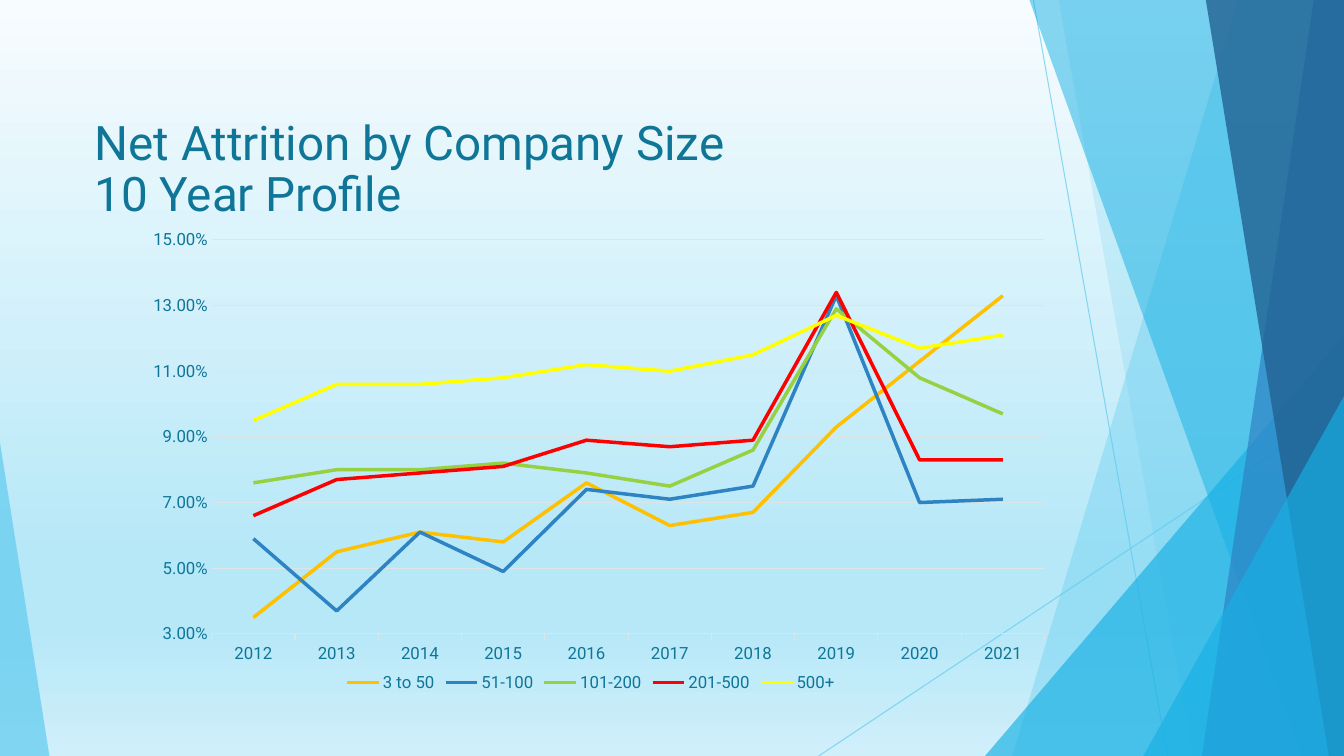
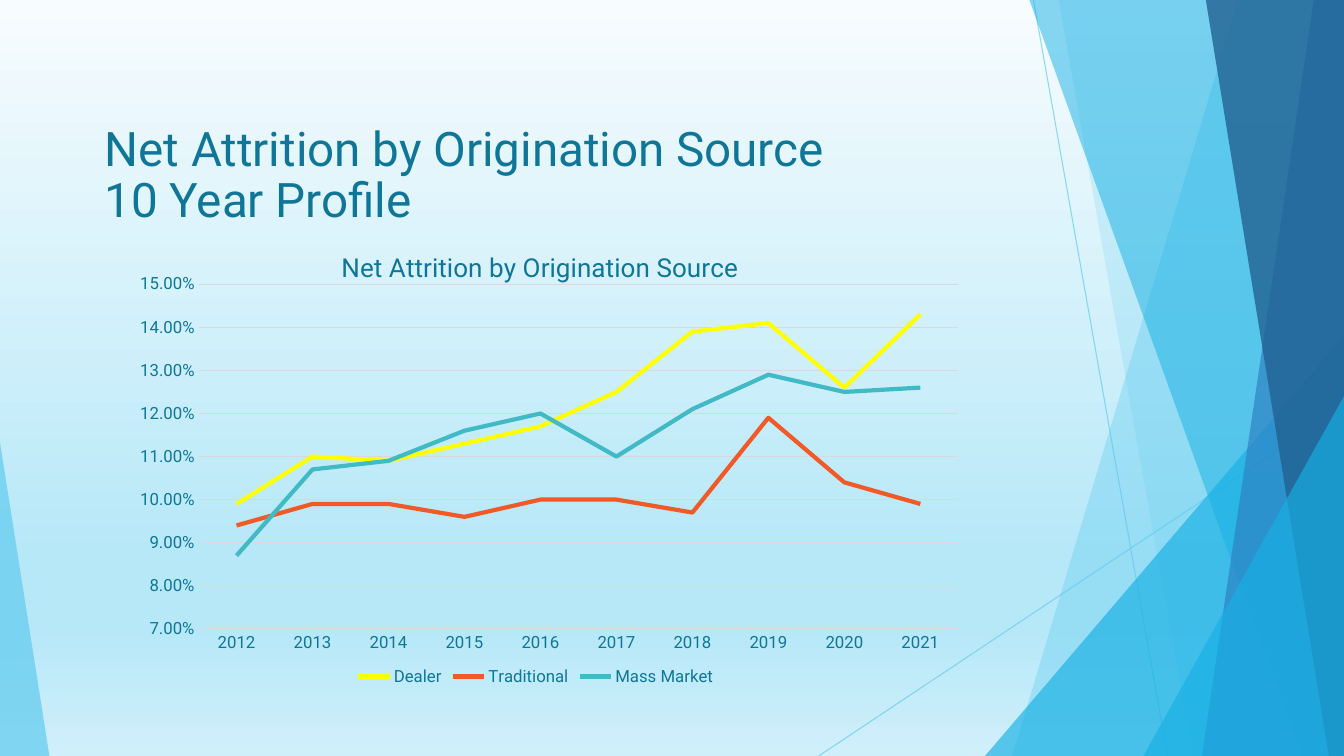
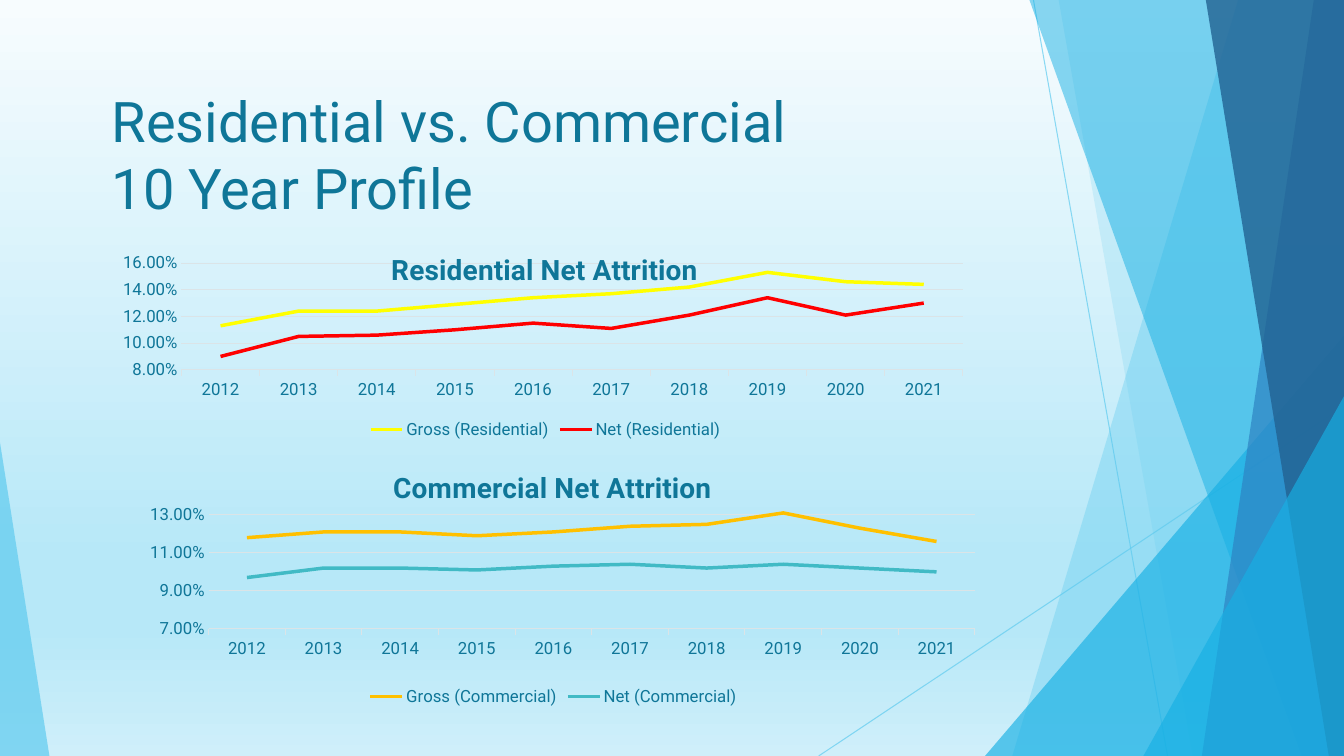
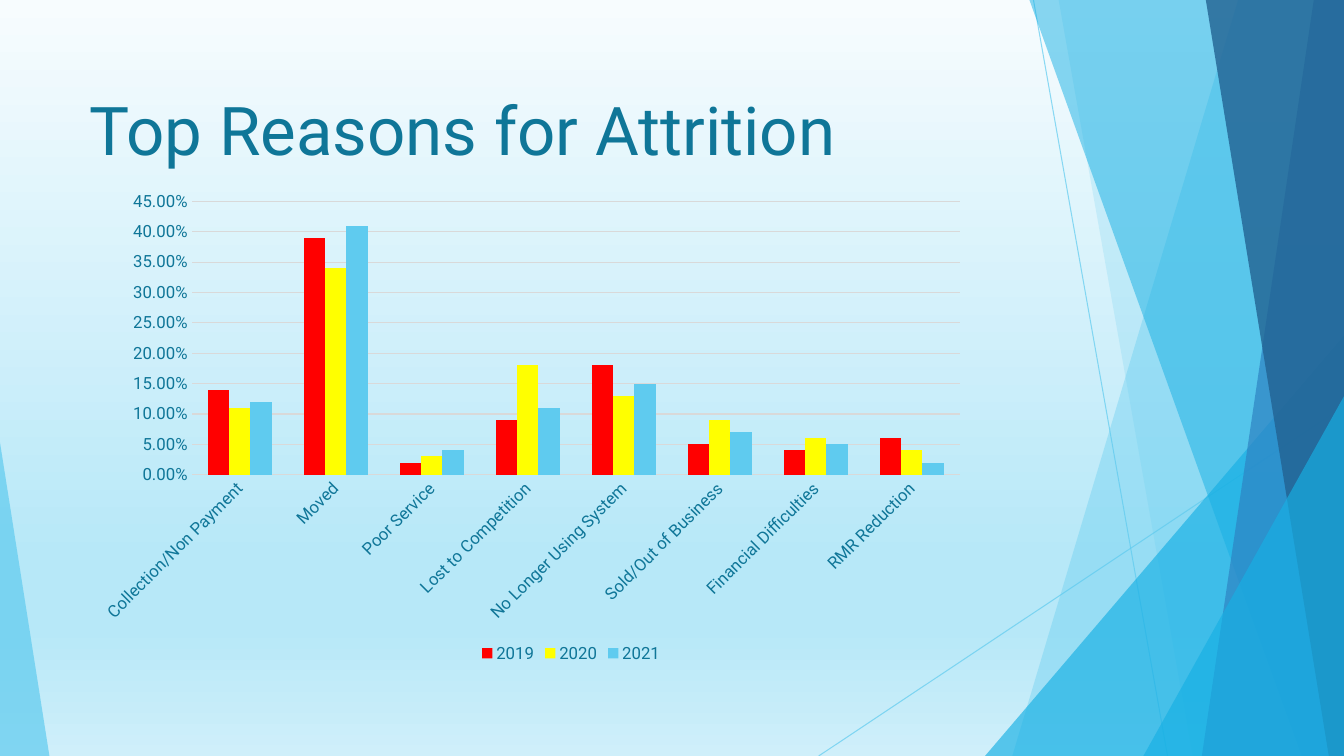
from lxml import etree
from pptx import Presentation
from pptx import util as u
from pptx.chart import data as chart_data
from pptx.dml import color as dml_color
from pptx.enum import chart as chart_enum
from pptx.enum import shapes, text
from pptx.oxml.ns import qn

PX = 9144  # EMU per px, at 100 px to the inch
WIDTH, HEIGHT = 1333, 750
SKY, AZURE, BLUE, NAVY, TEAL = "5FCBEF", "17B0E4", "2E83C3", "226292", "0F7698"
RED, YELLOW, AMBER, GREEN, ORANGE, AQUA = "FF0000", "FFFF00", "FFC000", "96D141", "F15A27", "41BAC5"
PALE, GREY = "DBE4E7", "D9D9D9"
YEARS = [str(year) for year in range(2012, 2022)]
BACKDROP = [(0, "F7FCFE"), (74, "B7E8F8"), (83, "B7E8F8"), (100, "CFEFFA")]

# Lines: x and y of both ends
RAYS = [(1025, 0, 1158, 750), (1333, 403, 812, 750)]
# Bands: x at the top and bottom of the left edge; they reach the right side of the slide.
# Triangles: left, top, width and apex position; they stand on the bottom of the slide.
FACETS = [
    ("band", (1228, 1004), SKY, 36),
    ("band", (1050, 1183), SKY, 20),
    ("triangle", (977, 333, 356, 1), AZURE, 66),
    ("band", (1021, 1291), AZURE, 50),
    ("band", (1303, 1192), BLUE, 70),
    ("band", (1196, 1318), NAVY, 80),
    ("triangle", (1134, 393, 199, 1), AZURE, 66),
    ("triangle", (0, 439, 49, 0), SKY, 70),
]

# Plot and title places are px from the corner of their chart; series values are percentages.
PAGES = [
    {
        "title": "Net Attrition by Company Size\v10 Year Profile",
        "box": (84, 105, 906, 120), "size": 34, "spacing": 0.9,
        "charts": [{
            "box": (121, 216, 930, 475), "plot": (89, 22, 826, 391),
            "scale": (3, 15, 2), "grid": PALE, "ticks": True, "weight": 2.5,
            "series": [
                ("3 to 50", AMBER, [3.5, 5.5, 6.1, 5.8, 7.6, 6.3, 6.7, 9.3, 11.3, 13.3]),
                ("51-100", BLUE, [5.9, 3.7, 6.1, 4.9, 7.4, 7.1, 7.5, 13.3, 7, 7.1]),
                ("101-200", GREEN, [7.6, 8, 8, 8.2, 7.9, 7.5, 8.6, 12.9, 10.8, 9.7]),
                ("201-500", RED, [6.6, 7.7, 7.9, 8.1, 8.9, 8.7, 8.9, 13.4, 8.3, 8.3]),
                ("500+", YELLOW, [9.5, 10.6, 10.6, 10.8, 11.2, 11, 11.5, 12.7, 11.7, 12.1]),
            ],
        }],
    },
    {
        "title": "Net Attrition by Origination Source\v10 Year Profile",
        "box": (94, 111, 906, 120), "size": 34, "spacing": 0.9,
        "charts": [{
            "box": (112, 222, 839, 463), "plot": (85, 60, 754, 342),
            "title": ("Net Attrition by Origination Source", 18.6, False, (222, 22)),
            "scale": (7, 15, 1), "grid": GREY, "weight": 3,
            "series": [
                ("Dealer", YELLOW, [9.9, 11, 10.9, 11.3, 11.7, 12.5, 13.9, 14.1, 12.6, 14.3]),
                ("Traditional", ORANGE, [9.4, 9.9, 9.9, 9.6, 10, 10, 9.7, 11.9, 10.4, 9.9]),
                ("Mass Market", AQUA, [8.7, 10.7, 10.9, 11.6, 12, 11, 12.1, 12.9, 12.5, 12.6]),
            ],
        }],
    },
    {
        "title": "Residential vs. Commercial\n10 Year Profile",
        "box": (101, 81, 1132, 144), "size": 40, "anchor": text.MSO_ANCHOR.TOP,
        "charts": [
            {
                "box": (118, 440, 862, 265), "plot": (89, 52, 760, 132),
                "title": ("Commercial Net Attrition", 20, True, (267, 20)),
                "scale": (7, 14, 2), "grid": PALE, "ticks": True, "weight": 2.5,
                "series": [
                    ("Gross (Commercial)", AMBER,
                     [11.8, 12.1, 12.1, 11.9, 12.1, 12.4, 12.5, 13.1, 12.3, 11.6]),
                    ("Net (Commercial)", AQUA,
                     [9.7, 10.2, 10.2, 10.1, 10.3, 10.4, 10.2, 10.4, 10.2, 10]),
                ],
            },
            {
                "box": (101, 226, 880, 214), "plot": (79, 35, 775, 106),
                "title": ("Residential Net Attrition", 20, True, (282, 18)),
                "scale": (8, 16, 2), "grid": PALE, "ticks": True, "weight": 2.5,
                "series": [
                    ("Gross (Residential)", YELLOW,
                     [11.3, 12.4, 12.4, 12.9, 13.4, 13.7, 14.2, 15.3, 14.6, 14.4]),
                    ("Net (Residential)", RED,
                     [9, 10.5, 10.6, 11, 11.5, 11.1, 12.1, 13.4, 12.1, 13]),
                ],
            },
        ],
    },
    {
        "title": "Top Reasons for Attrition",
        "box": (6, 53, 906, 120), "size": 48, "align": text.PP_ALIGN.CENTER,
        "charts": [{
            "kind": chart_enum.XL_CHART_TYPE.COLUMN_CLUSTERED,
            "box": (68, 183, 997, 479), "plot": (122, 17, 762, 271),
            "scale": (0, 45, 5), "grid": GREY,
            "categories": ["Collection/Non Payment", "Moved", "Poor Service",
                           "Lost to Competition", "No Longer Using System",
                           "Sold/Out of Business", "Financial Difficulties", "RMR Reduction"],
            "series": [
                ("2019", RED, [14, 39, 2, 9, 18, 5, 4, 6]),
                ("2020", YELLOW, [11, 34, 3, 18, 13, 9, 6, 4]),
                ("2021", SKY, [12, 41, 4, 11, 15, 7, 5, 2]),
            ],
        }],
    },
]


def color(value):
    return dml_color.RGBColor.from_string(value)


def place(part, box, frame, target=None):
    """Fix a chart part at box, in px from the corner of the chart frame."""
    for old in part.findall(qn("c:layout")):
        part.remove(old)
    layout = etree.Element(qn("c:layout"))
    part.insert(len(part.findall(qn("c:tx"))), layout)
    manual = etree.SubElement(layout, qn("c:manualLayout"))
    values = {"layoutTarget": target} if target else {}
    values.update(xMode="edge", yMode="edge")
    for key, length, whole in zip("xywh", box, frame[2:] * 2):
        values[key] = f"{length / whole:.4f}"
    for key, value in values.items():
        etree.SubElement(manual, qn(f"c:{key}"), val=value)


deck = Presentation()
deck.slide_width, deck.slide_height = WIDTH * PX, HEIGHT * PX

backdrop = deck.slide_master.background.fill
backdrop.gradient()
backdrop.gradient_angle = 270
stops = next(deck.slide_master.element.iter(qn("a:gsLst")))
for stop in list(stops):
    stops.remove(stop)
for position, shade in BACKDROP:
    stop = etree.SubElement(stops, qn("a:gs"), pos=str(position * 1000))
    etree.SubElement(stop, qn("a:srgbClr"), val=shade)

for content in PAGES:
    page = deck.slides.add_slide(deck.slide_layouts[6])

    # Crystal decoration
    translucent = []
    for ends in RAYS:
        ray = page.shapes.add_connector(shapes.MSO_CONNECTOR.STRAIGHT, *[n * PX for n in ends])
        ray.line.color.rgb = color(SKY)
        ray.line.width = u.Pt(0.75)
        etree.SubElement(ray.element.find(qn("p:spPr")), qn("a:effectLst"))
        translucent.append((ray, 70))
    for kind, geometry, shade, opacity in FACETS:
        if kind == "band":
            top_x, bottom_x = geometry
            outline = page.shapes.build_freeform(top_x, 0, scale=PX)
            outline.add_line_segments([(WIDTH, 0), (WIDTH, HEIGHT), (bottom_x, HEIGHT)])
            facet = outline.convert_to_shape()
        else:
            left, top, width, apex = geometry
            facet = page.shapes.add_shape(shapes.MSO_SHAPE.ISOSCELES_TRIANGLE,
                                          *[n * PX for n in (left, top, width, HEIGHT - top)])
            facet.adjustments[0] = apex
        facet.shadow.inherit = False
        facet.fill.solid()
        facet.fill.fore_color.rgb = color(shade)
        facet.line.fill.background()
        translucent.append((facet, opacity))
    for item, opacity in translucent:
        paint = next(item.element.iter(qn("a:srgbClr")))
        etree.SubElement(paint, qn("a:alpha"), val=str(opacity * 1000))

    # Title
    box = page.shapes.add_textbox(*[n * PX for n in content["box"]])
    frame = box.text_frame
    frame.word_wrap = True
    frame.vertical_anchor = content.get("anchor", text.MSO_ANCHOR.BOTTOM)
    frame.text = content["title"]
    for para in frame.paragraphs:
        para.alignment = content.get("align")
        para.line_spacing = content.get("spacing")
        for span in para.runs:
            span.font.color.rgb = color(TEAL)
            for key, value in {"name": "Roboto", "size": u.Pt(content["size"])}.items():
                setattr(span.font, key, value)

    # Charts
    for figure in content["charts"]:
        data = chart_data.CategoryChartData(number_format="0.00%")
        data.categories = figure.get("categories", YEARS)
        for name, _, values in figure["series"]:
            data.add_series(name, [round(value / 100, 3) for value in values])
        kind = figure.get("kind", chart_enum.XL_CHART_TYPE.LINE)
        chart = page.shapes.add_chart(kind, *[n * PX for n in figure["box"]], data).chart
        is_line = kind == chart_enum.XL_CHART_TYPE.LINE

        chart.has_legend = True
        chart.legend.position = chart_enum.XL_LEGEND_POSITION.BOTTOM
        chart.legend.include_in_layout = False

        low, high, step = figure["scale"]
        amounts, groups = chart.value_axis, chart.category_axis
        limits = {"minimum_scale": low / 100, "maximum_scale": high / 100,
                  "major_unit": step / 100, "has_major_gridlines": True}
        for key, value in limits.items():
            setattr(amounts, key, value)
        amounts.tick_labels.number_format = "0.00%"
        amounts.tick_labels.number_format_is_linked = False
        amounts.format.line.fill.background()
        amounts.major_tick_mark = groups.major_tick_mark = chart_enum.XL_TICK_MARK.NONE
        if figure.get("ticks"):
            groups.major_tick_mark = chart_enum.XL_TICK_MARK.OUTSIDE
        rules = [amounts.major_gridlines.format.line]
        if is_line:
            rules.append(groups.format.line)
        else:
            groups.format.line.fill.background()
        for rule in rules:
            rule.color.rgb = color(figure["grid"])
            rule.width = u.Pt(0.75)

        for part in (chart, chart.legend, amounts.tick_labels, groups.tick_labels):
            part.font.color.rgb = color(TEAL)
            for key, value in {"name": "Roboto", "size": u.Pt(12), "bold": False}.items():
                setattr(part.font, key, value)

        plot = chart.plots[0]
        plot.vary_by_categories = False
        if not is_line:
            plot.gap_width = 150
            labels = groups.tick_labels.font
            turned = next(next(chart.element.iter(qn("c:catAx"))).iter(qn("a:bodyPr")))
            turned.set("rot", str(-45 * 60000))
        for series, (_, shade, _) in zip(plot.series, figure["series"]):
            if is_line:
                series.smooth = False
                series.format.line.color.rgb = color(shade)
                series.format.line.width = u.Pt(figure["weight"])
            else:
                series.format.fill.solid()
                series.format.fill.fore_color.rgb = color(shade)
        place(next(chart.element.iter(qn("c:plotArea"))), figure["plot"], figure["box"], "inner")

        chart.has_title = "title" in figure
        if chart.has_title:
            heading, size, bold, corner = figure["title"]
            chart.chart_title.text_frame.text = heading
            span = chart.chart_title.text_frame.paragraphs[0].runs[0]
            span.font.color.rgb = color(TEAL)
            for key, value in {"name": "Roboto", "size": u.Pt(size), "bold": bold}.items():
                setattr(span.font, key, value)
            place(next(chart.element.iter(qn("c:title"))), corner, figure["box"])

deck.save("out.pptx")
